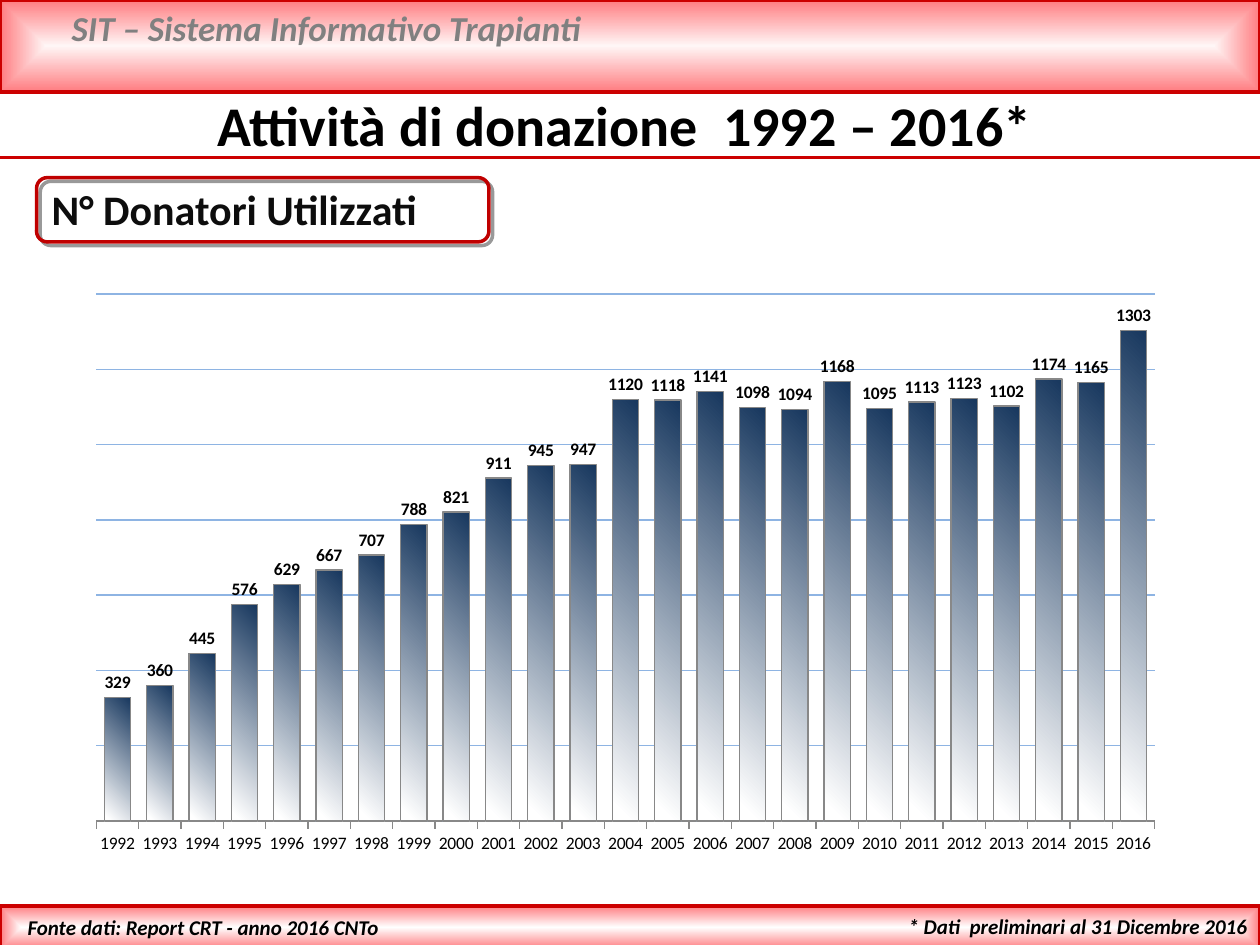
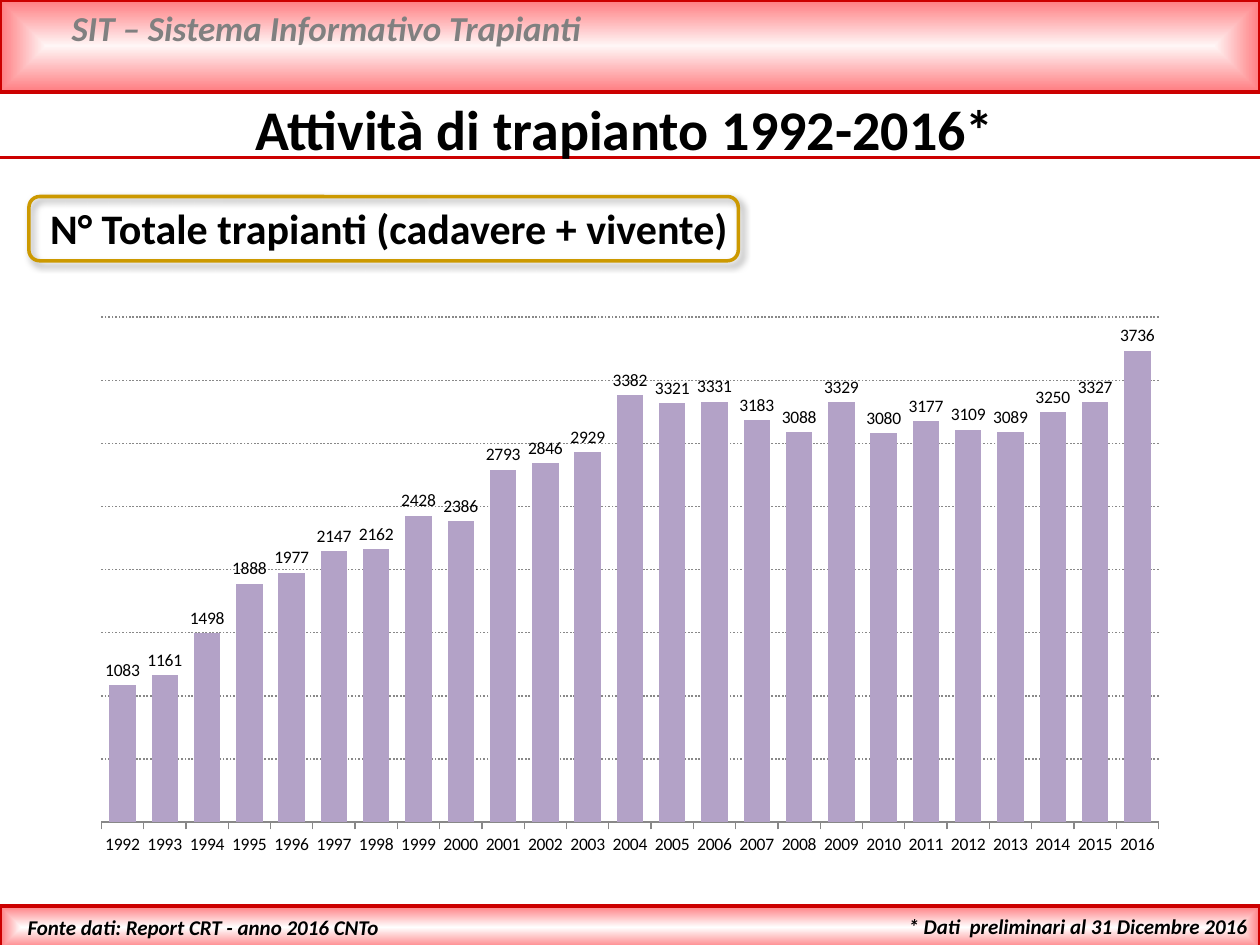
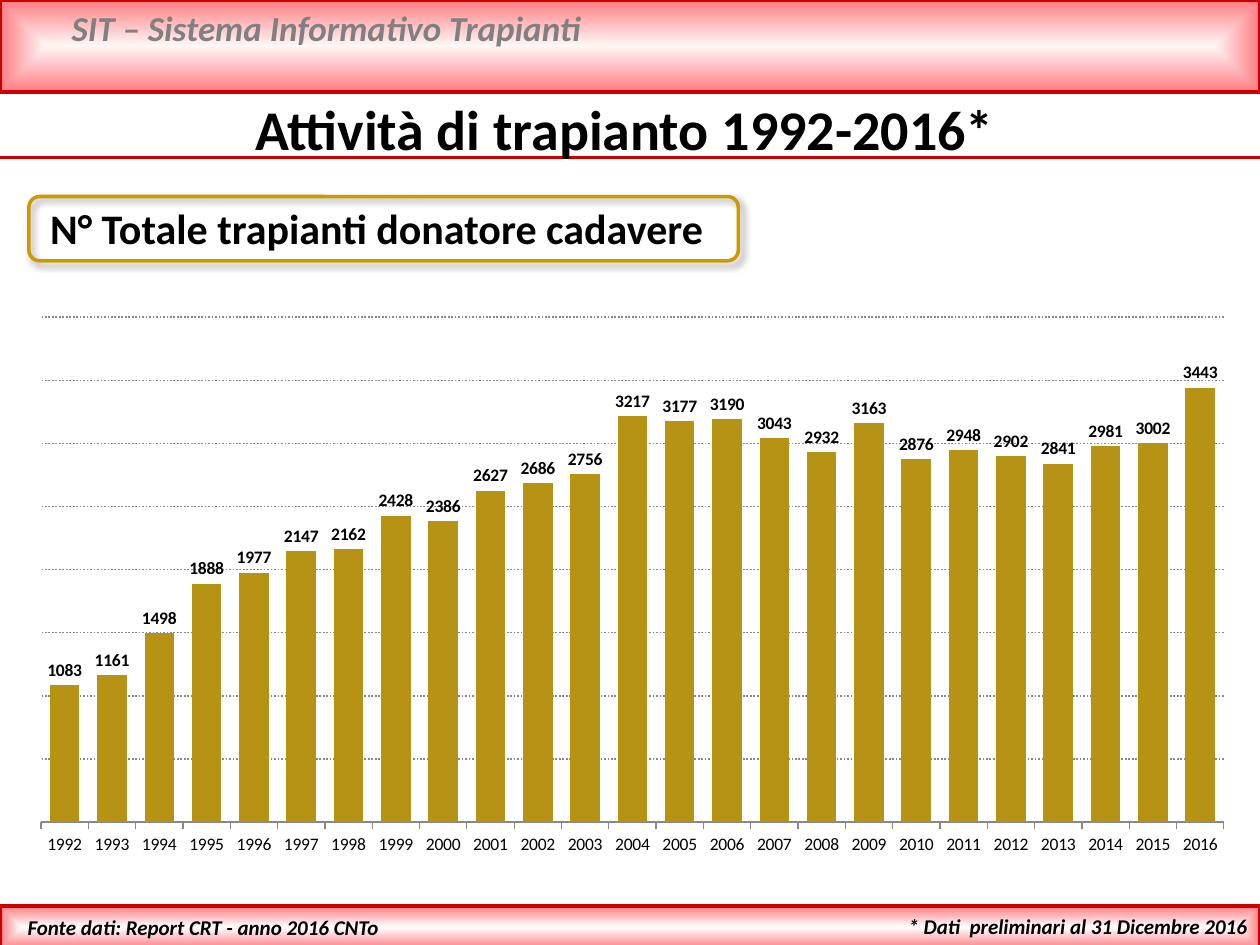
from lxml.etree import SubElement
from pptx import Presentation
from pptx.chart.data import CategoryChartData
from pptx.dml.color import RGBColor
from pptx.enum.chart import XL_CHART_TYPE, XL_LABEL_POSITION, XL_TICK_MARK
from pptx.enum.dml import MSO_LINE
from pptx.enum.shapes import MSO_CONNECTOR, MSO_SHAPE
from pptx.enum.text import MSO_ANCHOR, MSO_AUTO_SIZE, PP_ALIGN
from pptx.oxml import parse_xml
from pptx.oxml.ns import nsdecls, qn
from pptx.util import Inches, Pt

# Colours
BLACK = RGBColor(0x00, 0x00, 0x00)
NEAR_BLACK = RGBColor(0x0D, 0x0D, 0x0D)
WHITE = RGBColor(0xFF, 0xFF, 0xFF)
GREY = RGBColor(0x80, 0x80, 0x80)
AXIS_GREY = RGBColor(0x88, 0x88, 0x88)
RED = RGBColor(0xCC, 0x00, 0x00)
DARK_RED = RGBColor(0xC0, 0x00, 0x00)
PINK = RGBColor(0xFF, 0x7C, 0x80)
PALE_PINK = RGBColor(0xFF, 0xF6, 0xF6)
OCHRE = RGBColor(0xCC, 0x99, 0x00)
GOLD = RGBColor(0xB7, 0x93, 0x15)
LILAC = RGBColor(0xB3, 0xA2, 0xC7)
NAVY = RGBColor(0x17, 0x37, 0x5E)
LIGHT_BLUE = RGBColor(0x8E, 0xB4, 0xE3)

# Text formats
FONT = "Calibri"
TITLE = {"name": FONT, "size": Pt(32), "bold": True}
HEADER = {"name": FONT, "size": Pt(20), "bold": True, "italic": True}
FOOTER = {"name": FONT, "size": Pt(12), "bold": True, "italic": True}
LABEL = {"name": FONT, "size": Pt(24), "bold": True}
CHART = {"name": FONT, "size": Pt(10), "bold": False}
CHART_BOLD = {**CHART, "bold": True}

# Grid: 100 columns by 75 rows
COLUMNS, ROWS = 100, 75
YEARS = [str(year) for year in range(1992, 2017)]


def apply(font, values, color=BLACK):
    for name, value in values.items():
        setattr(font, name, value)
    font.color.rgb = color


def blend(fill, *stops):
    fill.gradient()
    for stop, (position, color) in zip(fill.gradient_stops, stops):
        stop.position = position
        stop.color.rgb = color


def outline(line, color, width):
    line.color.rgb = color
    line.width = Pt(width)


class Deck:
    def __init__(self):
        self.presentation = Presentation()
        self.presentation.slide_width = Inches(10)
        self.presentation.slide_height = Inches(7.5)
        self.slide = None

    def place(self, left, top, width, height):
        column = self.presentation.slide_width / COLUMNS
        row = self.presentation.slide_height / ROWS
        return [round(n) for n in (left * column, top * row, width * column, height * row)]

    def fill_frame(self, frame, text, style, color=BLACK, align=PP_ALIGN.LEFT):
        frame.word_wrap = True
        frame.auto_size = MSO_AUTO_SIZE.NONE
        frame.vertical_anchor = MSO_ANCHOR.TOP
        paragraph = frame.paragraphs[0]
        paragraph.text = text
        paragraph.alignment = align
        apply(paragraph.runs[0].font, style, color)

    def text(self, at, text, style, color=BLACK, align=PP_ALIGN.LEFT):
        frame = self.slide.shapes.add_textbox(*self.place(*at)).text_frame
        self.fill_frame(frame, text, style, color, align)
        return frame

    def band(self, at, centre):
        band = self.slide.shapes.add_shape(MSO_SHAPE.RECTANGLE, *self.place(*at))
        band.shadow.inherit = False
        outline(band.line, RED, 2)
        blend(band.fill, (0, centre), (1, PINK))
        gradient = band._element.spPr.find(qn("a:gradFill"))
        gradient.replace(gradient.find(qn("a:lin")), parse_xml(
            f'<a:path {nsdecls("a")} path="shape">'
            '<a:fillToRect l="50000" t="50000" r="50000" b="50000"/></a:path>'))

    def rule(self, row):
        left, top, width, _ = self.place(0, row, COLUMNS, 0)
        rule = self.slide.shapes.add_connector(MSO_CONNECTOR.STRAIGHT, left, top, left + width, top)
        outline(rule.line, RED, 2)
        SubElement(rule._element.spPr, qn("a:effectLst"))

    def frame(self, at, color, blur):
        frame = self.slide.shapes.add_shape(MSO_SHAPE.ROUNDED_RECTANGLE, *self.place(*at))
        frame.fill.background()
        outline(frame.line, color, 2)
        frame.shadow.inherit = False
        frame._element.spPr.find(qn("a:effectLst")).append(parse_xml(
            f'<a:outerShdw {nsdecls("a")} blurRad="{Pt(blur)}" dist="{Pt(3)}" dir="2700000" '
            'algn="tl" rotWithShape="0"><a:srgbClr val="000000"><a:alpha val="40000"/>'
            '</a:srgbClr></a:outerShdw>'))

    def start(self, title, title_row):
        """New slide with the shared bands, footer and title."""
        self.slide = self.presentation.slides.add_slide(self.presentation.slide_layouts[5])
        self.band((0, 0, COLUMNS, 7.3), PALE_PINK)
        self.text((4.7, 0, 89.8, 4.4), "SIT – Sistema Informativo Trapianti", HEADER, GREY)
        self.band((0, 71.9, COLUMNS, 3.4), WHITE)
        self.rule(12.5)
        self.text((58.7, 72, 41.3, 3), "* Dati  preliminari al 31 Dicembre 2016", FOOTER,
                  align=PP_ALIGN.RIGHT)
        self.text((1.2, 72.1, 32.1, 3), "Fonte dati: Report CRT - anno 2016 CNTo", FOOTER)
        heading = self.slide.shapes.title
        heading.left, heading.top, heading.width, heading.height = self.place(0, title_row, 99.2, 6.4)
        self.fill_frame(heading.text_frame, title, TITLE, align=PP_ALIGN.CENTER)
        self.slide.shapes._spTree.append(heading._element)  # in front of the rule

    def columns(self, at, values, top, step, label_style):
        """Column chart over the years; returns its series and gridlines for colouring."""
        data = CategoryChartData()
        data.categories = YEARS
        data.add_series("Series 1", values)
        chart = self.slide.shapes.add_chart(
            XL_CHART_TYPE.COLUMN_CLUSTERED, *self.place(*at), data).chart
        chart.has_legend = chart.has_title = False
        apply(chart.font, CHART)

        plot = chart.plots[0]
        plot.gap_width, plot.overlap, plot.vary_by_categories = 60, -20, False
        plot.has_data_labels = True
        plot.data_labels.show_value = True
        plot.data_labels.position = XL_LABEL_POSITION.OUTSIDE_END
        apply(plot.data_labels.font, label_style)

        years = chart.category_axis
        years.major_tick_mark = XL_TICK_MARK.OUTSIDE
        years.has_major_gridlines = False
        outline(years.format.line, AXIS_GREY, 0.75)
        scale = chart.value_axis
        scale.minimum_scale, scale.maximum_scale, scale.major_unit = 0, top, step
        scale.has_major_gridlines = True
        scale.visible = False

        area = chart._chartSpace.find(".//" + qn("c:plotArea"))
        for layout in area.findall(qn("c:layout")):
            area.remove(layout)
        parts = {"layoutTarget": "inner", "xMode": "edge", "yMode": "edge",
                 "x": 0.02, "y": 0.02, "w": 0.96, "h": 0.9}
        tags = "".join(f'<c:{name} val="{value}"/>' for name, value in parts.items())
        area.insert(0, parse_xml(
            f'<c:layout {nsdecls("c")}><c:manualLayout>{tags}</c:manualLayout></c:layout>'))
        return plot.series[0], scale.major_gridlines.format.line


def donors(deck):
    deck.start("Attività di donazione  1992 – 2016*", 6.7)
    label = deck.text((2.5, 14.1, 36.5, 5.1), "N° Donatori Utilizzati", LABEL, NEAR_BLACK)
    label.margin_left = Inches(0.16)
    deck.frame((2.9, 14.1, 35.9, 5.1), DARK_RED, 0)
    used = [329, 360, 445, 576, 629, 667, 707, 788, 821, 911, 945, 947, 1120, 1118, 1141,
            1098, 1094, 1168, 1095, 1113, 1123, 1102, 1174, 1165, 1303]
    bars, grid = deck.columns((5.9, 22.4, 87.5, 46.5), used, 1400, 200, CHART_BOLD)
    blend(bars.format.fill, (0, NAVY), (0.96, WHITE))
    bars.format.fill.gradient_angle = 225
    outline(bars.format.line, AXIS_GREY, 0.75)
    outline(grid, LIGHT_BLUE, 0.75)


def transplants(deck, label, at, values, color, label_style):
    deck.start("Attività di trapianto 1992-2016*", 7)
    deck.text((3, 15.6, 56.9, 5.1), label, LABEL)
    deck.frame((2.3, 15.6, 56.3, 5.1), OCHRE, 4)
    bars, grid = deck.columns(at, values, 4000, 500, label_style)
    bars.format.fill.solid()
    bars.format.fill.fore_color.rgb = color
    outline(grid, AXIS_GREY, 1)
    grid.dash_style = MSO_LINE.ROUND_DOT


def main():
    deck = Deck()
    donors(deck)

    # Both kinds of donor share the counts up to 2000
    until_2000 = [1083, 1161, 1498, 1888, 1977, 2147, 2162, 2428, 2386]
    all_donors = until_2000 + [2793, 2846, 2929, 3382, 3321, 3331, 3183, 3088, 3329, 3080,
                               3177, 3109, 3089, 3250, 3327, 3736]
    deceased = until_2000 + [2627, 2686, 2756, 3217, 3177, 3190, 3043, 2932, 3163, 2876,
                             2948, 2902, 2841, 2981, 3002, 3443]
    transplants(deck, "N° Totale trapianti (cadavere + vivente)",
                (6.3, 24.3, 87.4, 44.5), all_donors, LILAC, CHART)
    transplants(deck, "N° Totale trapianti donatore cadavere",
                (1.3, 24.3, 97.8, 44.5), deceased, GOLD, CHART_BOLD)
    deck.presentation.save("out.pptx")


if __name__ == "__main__":
    main()
